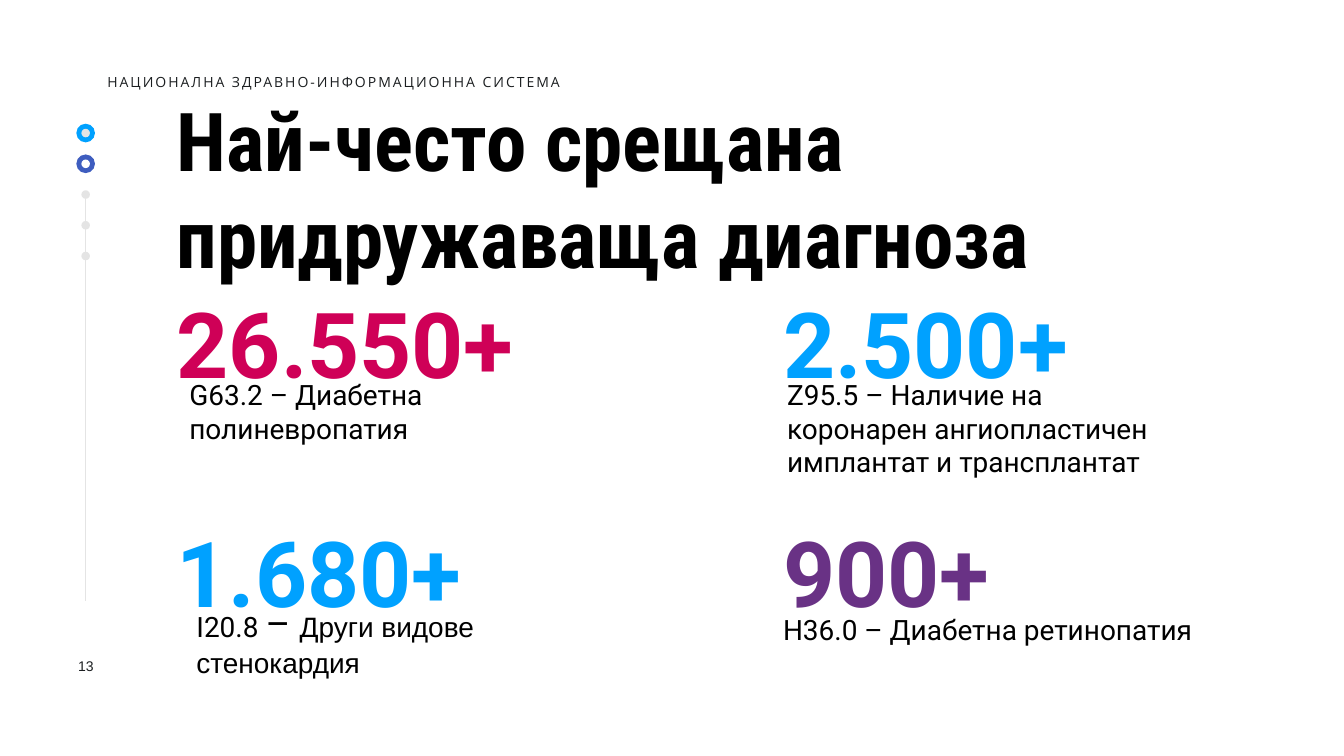
from lxml import etree
from pptx import Presentation
from pptx.dml.color import RGBColor
from pptx.enum import shapes, text
from pptx.oxml.ns import qn
from pptx.util import Inches, Pt

BLACK, INK, GREY, WHITE = "000000", "1B1E20", "E4E4E4", "FFFFFF"
SKY, BLUE, CRIMSON, PURPLE = "00A1FF", "3E5DBF", "CF0057", "693285"


def colour(value):
    return RGBColor.from_string(value)


class Deck:
    """Holds the style and the current slide."""

    font = "Roboto"
    label_size = 40
    figure_size = 130

    def __init__(self, slide):
        self.slide = slide

    def textbox(self, left, top, width, height, runs, size, hue=BLACK,
                font=None, bold=False, grow=True):
        """Add one paragraph; runs holds (text, size, font), None = as paragraph."""
        box = self.slide.shapes.add_textbox(
            Inches(left), Inches(top), Inches(width), Inches(height))
        frame = box.text_frame
        frame.word_wrap = True
        if grow:
            frame.auto_size = text.MSO_AUTO_SIZE.SHAPE_TO_FIT_TEXT
        paragraph = frame.paragraphs[0]
        paragraph.font.name = font or self.font
        paragraph.font.size = Pt(size)
        paragraph.font.bold = bold
        paragraph.font.color.rgb = colour(hue)
        for words, run_size, run_font in runs:
            run = paragraph.add_run()
            run.text = words
            if run_size:
                run.font.size = Pt(run_size)
            if run_font:
                run.font.name = run_font
        return frame

    def line(self, text_value, *place, **style):
        return self.textbox(*place, [(text_value, None, None)], **style)

    def figure(self, value, left, top, width, hue):
        self.line(value, left, top, width, 2.29,
                  size=self.figure_size, hue=hue, bold=True)

    def dot(self, centre_x, centre_y, diameter, hue):
        dot = self.slide.shapes.add_shape(
            shapes.MSO_SHAPE.OVAL,
            Inches(centre_x - diameter / 2), Inches(centre_y - diameter / 2),
            Inches(diameter), Inches(diameter))
        dot.shadow.inherit = False
        dot.fill.solid()
        dot.fill.fore_color.rgb = colour(hue)
        dot.line.fill.background()

    def rail(self, x, bottom, top):
        rail = self.slide.shapes.add_connector(
            shapes.MSO_CONNECTOR.STRAIGHT,
            Inches(x), Inches(bottom), Inches(x), Inches(top))
        rail.line.color.rgb = colour(GREY)
        rail.line.width = Pt(2)
        etree.SubElement(rail._element.spPr, qn("a:effectLst"))


def main():
    presentation = Presentation()
    presentation.slide_width = Inches(26.67)
    presentation.slide_height = Inches(15)
    deck = Deck(presentation.slides.add_slide(presentation.slide_layouts[6]))

    # Progress rail: two rings, then plain dots at an even pitch
    rail_x, rail_bottom, first_dot, pitch = 1.7, 11.92, 2.64, 0.61
    for rail_top in (3.94, 6.51):
        deck.rail(rail_x, rail_bottom, rail_top)
    for step, ring in enumerate((SKY, BLUE)):
        deck.dot(rail_x, first_dot + step * pitch, 0.37, ring)
    for step, centre in enumerate((GREY, WHITE, GREY, GREY, GREY)):
        deck.dot(rail_x, first_dot + step * pitch, 0.17, centre)

    # Page number
    page = deck.line("13", 1.36, 12.99, 0.69, 0.49,
                     size=20, hue=INK, font="Arial", grow=False)
    page.paragraphs[0].alignment = text.PP_ALIGN.CENTER

    # Title
    deck.line("Най-често срещана придружаваща диагноза", 3.41, 1.74, 22.86, 4.01,
              size=116, font="Roboto Condensed", bold=True)

    # Patient counts in a two by two grid
    left, right, upper, lower = 3.41, 15.44, 5.65, 10.2
    deck.figure("26.550+", left, upper, 7.57, CRIMSON)
    deck.figure("2.500+", right, upper, 7.57, SKY)
    deck.figure("1.680+", left, lower, 7.47, SKY)
    deck.figure("900+", right, lower, 7.57, PURPLE)

    # Diagnoses under the counts
    for diagnosis, *place in (
        ("G63.2 – Диабетна полиневропатия", 3.66, 7.44, 8.5, 1.45),
        ("Z95.5 – Наличие на коронарен ангиопластичен имплантат и трансплантат",
         15.52, 7.44, 7.78, 2.12),
        ("H36.0 – Диабетна ретинопатия", right, 12.1, 9.06, 0.77),
    ):
        deck.line(diagnosis, *place, size=deck.label_size)
    deck.textbox(3.8, 11.85, 8.35, 1.68,
                 [("I20.8 ", None, None), ("– ", 54, None),
                  ("Други видове стенокардия", None, "Arial")],
                 size=deck.label_size)

    # Running header
    header = deck.line("НАЦИОНАЛНА ЗДРАВНО-ИНФОРМАЦИОННА СИСТЕМА",
                       2.07, 1.39, 9.62, 0.45, size=20, hue=INK, font="Open Sans")
    header.word_wrap = False
    header.vertical_anchor = text.MSO_ANCHOR.MIDDLE
    header.margin_left = header.margin_right = Inches(0.06)
    header.margin_top = header.margin_bottom = Inches(0.06)
    header.paragraphs[0].runs[0].font._element.set("spc", "280")

    presentation.save("out.pptx")


if __name__ == "__main__":
    main()
